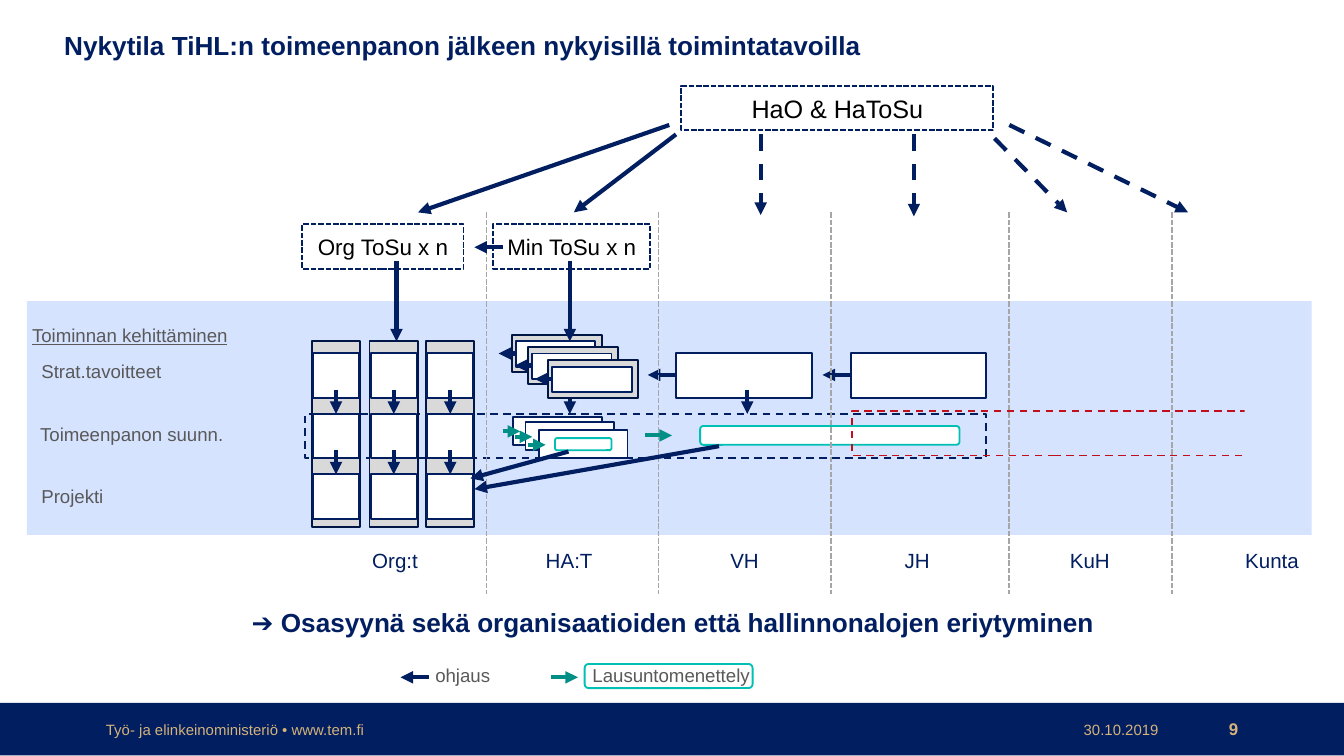
from pptx import Presentation
from pptx.dml.color import RGBColor
from pptx.enum.dml import MSO_LINE
from pptx.enum.shapes import MSO_CONNECTOR, MSO_SHAPE
from pptx.enum.text import MSO_ANCHOR, PP_ALIGN
from pptx.oxml.ns import qn
from pptx.util import Inches, Pt
from lxml.etree import SubElement

THEME = {
    "font": "Arial", "navy": "001E60", "edge": "001647", "band": "D6E3FF",
    "teal": "00BFB3", "teal_dark": "008F86", "red": "C10F1D", "gold": "D5B37A",
    "grey": "D9D9D9", "divider": "A6A6A6", "label": "595959",
    "white": "FFFFFF", "black": "000000",
    "title_size": 14, "box_size": 12, "top_box_size": 13.5, "column_size": 11,
    "label_size": 10, "footer_size": 8, "page_size": 9,
    "thin": 1, "thick": 2.25,
}
DASH, FINE_DASH = MSO_LINE.DASH, MSO_LINE.SQUARE_DOT
LEFT, CENTER, RIGHT = PP_ALIGN.LEFT, PP_ALIGN.CENTER, PP_ALIGN.RIGHT
ROUNDED = MSO_SHAPE.ROUNDED_RECTANGLE

TITLE = "Nykytila TiHL:n toimeenpanon jälkeen nykyisillä toimintatavoilla"
CONCLUSION = "➔ Osasyynä sekä organisaatioiden että hallinnonalojen eriytyminen"
COLUMN_LABELS = [("Org:t", 2.67, 0.54), ("HA:T", 3.96, 0.55), ("VH", 5.33, 0.42),
                 ("JH", 6.63, 0.39), ("KuH", 7.86, 0.5), ("Kunta", 9.16, 0.61)]
ROW_LABELS = [("Toiminnan kehittäminen", 0.14, 2.36, 1.68, True),
              ("Strat.tavoitteet", 0.21, 2.63, 1.1, False),
              ("Toimeenpanon suunn.", 0.2, 3.1, 1.59, False),
              ("Projekti", 0.21, 3.56, 0.67, False)]
LEGEND_LABELS = [("ohjaus", 3.14, 0.61), ("Lausuntomenettely", 4.31, 1.38)]
PLAN_BOXES = [("HaO & HaToSu", 5.07, 0.64, 2.32, "top_box_size"),
              ("Org ToSu x n", 2.25, 1.67, 1.2, "box_size"),
              ("Min ToSu x n", 3.67, 1.67, 1.17, "box_size")]
FOOTER = [("Työ- ja elinkeinoministeriö •\u00a0www.tem.fi".replace("\u00a0", chr(160)),
           0.69, 3.37, LEFT, "footer_size", False),
          ("30.10.2019", 7.95, 0.77, RIGHT, "footer_size", False),
          ("9", 8.72, 0.59, RIGHT, "page_size", True)]
FOOTER[0] = ("Työ- ja elinkeinoministeriö • www.tem.fi",) + FOOTER[0][1:]
DIVIDERS = [3.62, 4.9, 6.18, 7.51, 8.72]
GOAL_BOXES = [5.03, 6.33]
STEERING_ARROWS = [
    (5.03, 1, 4.27, 1.58), (4.98, 0.93, 3.11, 1.58), (3.74, 1.84, 3.53, 1.84),
    (2.95, 1.94, 2.95, 2.54), (4.24, 1.94, 4.24, 2.54),
    (4.24, 2.9, 4.24, 3.08), (5.56, 2.9, 5.56, 3.08),
    (5.35, 3.32, 3.53, 3.64), (3.19, 5.04, 2.98, 5.04),
]
DASHED_ARROWS = [(5.66, 1, 5.66, 1.6), (6.8, 1, 6.8, 1.61),
                 (7.4, 1.03, 7.94, 1.58), (7.51, 0.93, 8.84, 1.58)]
STATEMENT_ARROWS = [(4.8, 3.24, 5, 3.24), (4.1, 5.04, 4.3, 5.04)]
ORGANISATION_LEFTS = [2.32, 2.75, 3.17]
ROW_TOPS = [2.63, 3.08, 3.53]
ROW_HEIGHT = 0.33
GOAL_STACK = [(3.81, 2.49), (3.93, 2.58), (4.08, 2.68)]
STATEMENT_STACK = [(3.82, 3.1), (3.91, 3.14), (4.01, 3.2)]


def color(name):
    return RGBColor.from_string(THEME[name])


def write(shape, text, size="label_size", fill="label", align=LEFT, bold=False,
          underline=False, anchor=MSO_ANCHOR.TOP, wrap=False):
    frame = shape.text_frame
    frame.word_wrap = wrap
    frame.vertical_anchor = anchor
    frame.margin_left = frame.margin_right = Inches(0.1)
    frame.margin_top = frame.margin_bottom = Inches(0.05)
    paragraph = frame.paragraphs[0]
    paragraph.alignment = align
    run = paragraph.add_run()
    run.text = text
    font = run.font
    font.name, font.size = THEME["font"], Pt(THEME[size])
    font.bold, font.underline = bold, underline
    font.color.rgb = color(fill)


def add_text(slide, text, left, top, width, height, **style):
    shape = slide.shapes.add_textbox(*map(Inches, (left, top, width, height)))
    write(shape, text, **style)


def add_box(slide, left, top, width, height, fill="white", line="navy",
            dash=None, kind=MSO_SHAPE.RECTANGLE):
    shape = slide.shapes.add_shape(kind, *map(Inches, (left, top, width, height)))
    shape.shadow.inherit = False
    if fill:
        shape.fill.solid()
        shape.fill.fore_color.rgb = color(fill)
    else:
        shape.fill.background()
    if line:
        shape.line.color.rgb = color(line)
        shape.line.width = Pt(THEME["thin"])
        if dash:
            shape.line.dash_style = dash
    else:
        shape.line.fill.background()
    return shape


def add_line(slide, points, line="navy", width="thick", dash=None, arrow=True):
    connector = slide.shapes.add_connector(MSO_CONNECTOR.STRAIGHT, *map(Inches, points))
    connector.line.color.rgb = color(line)
    connector.line.width = Pt(THEME[width])
    if dash:
        connector.line.dash_style = dash
    if arrow:
        SubElement(connector.line._get_or_add_ln(), qn("a:tailEnd"), type="triangle")
    SubElement(connector._element.spPr, qn("a:effectLst"))


def add_background(slide):
    add_box(slide, 0, 5.23, 10, 0.39, fill="navy", line=None)
    add_box(slide, 0.2, 2.24, 9.56, 1.74, fill="band", line=None)
    add_box(slide, 4.35, 4.94, 1.25, 0.18, line="teal", kind=ROUNDED)
    add_box(slide, 2.27, 3.08, 5.07, ROW_HEIGHT, fill=None, dash=DASH)
    for left in GOAL_BOXES:
        add_box(slide, left, ROW_TOPS[0], 1.01, ROW_HEIGHT)
        add_line(slide, (left, 2.79, left - 0.21, 2.79))
    add_box(slide, 5.21, 3.17, 1.93, 0.14, line="teal", kind=ROUNDED)
    add_box(slide, 6.34, 3.06, 3.02, ROW_HEIGHT, fill=None, line="red", dash=DASH)
    for x in DIVIDERS:
        add_line(slide, (x, 1.58, x, 4.42), line="divider", width="thin",
                 dash=FINE_DASH, arrow=False)
    add_box(slide, 9.26, 3.01, 0.21, 0.39, fill="band", line=None)


def add_organisation(slide, left):
    add_box(slide, left, 2.54, 0.36, 1.38, fill="grey", line="edge")
    for top in ROW_TOPS:
        add_box(slide, left + 0.01, top, 0.34, ROW_HEIGHT)
    middle = left + 0.18
    for top in ROW_TOPS[:-1]:
        add_line(slide, (middle, top + 0.27, middle, top + 0.45))


def add_goal_card(slide, left, top):
    add_box(slide, left, top, 0.67, 0.28, fill="grey", line="edge")
    add_box(slide, left + 0.03, top + 0.05, 0.59, 0.19)
    add_line(slide, (left + 0.03, top + 0.14, left - 0.1, top + 0.14))


def add_statement_card(slide, left, top, pill):
    add_box(slide, left, top, 0.66, 0.21)
    if pill:
        add_box(slide, left + 0.12, top + 0.06, 0.42, 0.09, line="teal", kind=ROUNDED)
    add_line(slide, (left - 0.08, top + 0.11, left + 0.05, top + 0.11), line="teal_dark")


def add_labels(slide):
    for text, left, width in COLUMN_LABELS:
        add_text(slide, text, left, 4.03, width, 0.29,
                 size="column_size", fill="navy", align=CENTER)
    for text, left, top, width, underline in ROW_LABELS:
        add_text(slide, text, left, top, width, 0.27, underline=underline)
    for text, left, width in LEGEND_LABELS:
        add_text(slide, text, left, 4.89, width, 0.27)
    for text, left, width, align, size, bold in FOOTER:
        add_text(slide, text, left, 5.34, width, 0.17, size=size, fill="gold",
                 align=align, bold=bold, anchor=MSO_ANCHOR.MIDDLE, wrap=True)
    add_text(slide, CONCLUSION, 1.74, 4.46, 6.54, 0.34, size="title_size",
             fill="navy", align=CENTER, bold=True)


def main():
    presentation = Presentation()
    presentation.slide_width = Inches(10)
    presentation.slide_height = presentation.slide_width * 9 // 16
    slide = presentation.slides.add_slide(presentation.slide_layouts[5])
    title = slide.shapes.title
    title.left, title.top, title.width, title.height = map(Inches, (0.37, 0.17, 6.15, 0.34))
    write(title, TITLE, size="title_size", fill="navy", align=CENTER, bold=True)

    add_background(slide)
    for text, left, top, width, size in PLAN_BOXES:
        box = add_box(slide, left, top, width, 0.33, dash=FINE_DASH)
        write(box, text, size=size, fill="black", align=CENTER, anchor=MSO_ANCHOR.MIDDLE)
    add_goal_card(slide, *GOAL_STACK[0])
    for points in STEERING_ARROWS:
        add_line(slide, points)
    for points in DASHED_ARROWS:
        add_line(slide, points, dash=DASH)
    for points in STATEMENT_ARROWS:
        add_line(slide, points, line="teal_dark")
    for left in ORGANISATION_LEFTS:
        add_organisation(slide, left)
    for left, top in GOAL_STACK[1:]:
        add_goal_card(slide, left, top)
    for index, (left, top) in enumerate(STATEMENT_STACK):
        add_statement_card(slide, left, top, pill=index > 0)
    add_line(slide, (4.23, 3.36, 3.5, 3.56))
    add_labels(slide)
    presentation.save("out.pptx")


if __name__ == "__main__":
    main()
